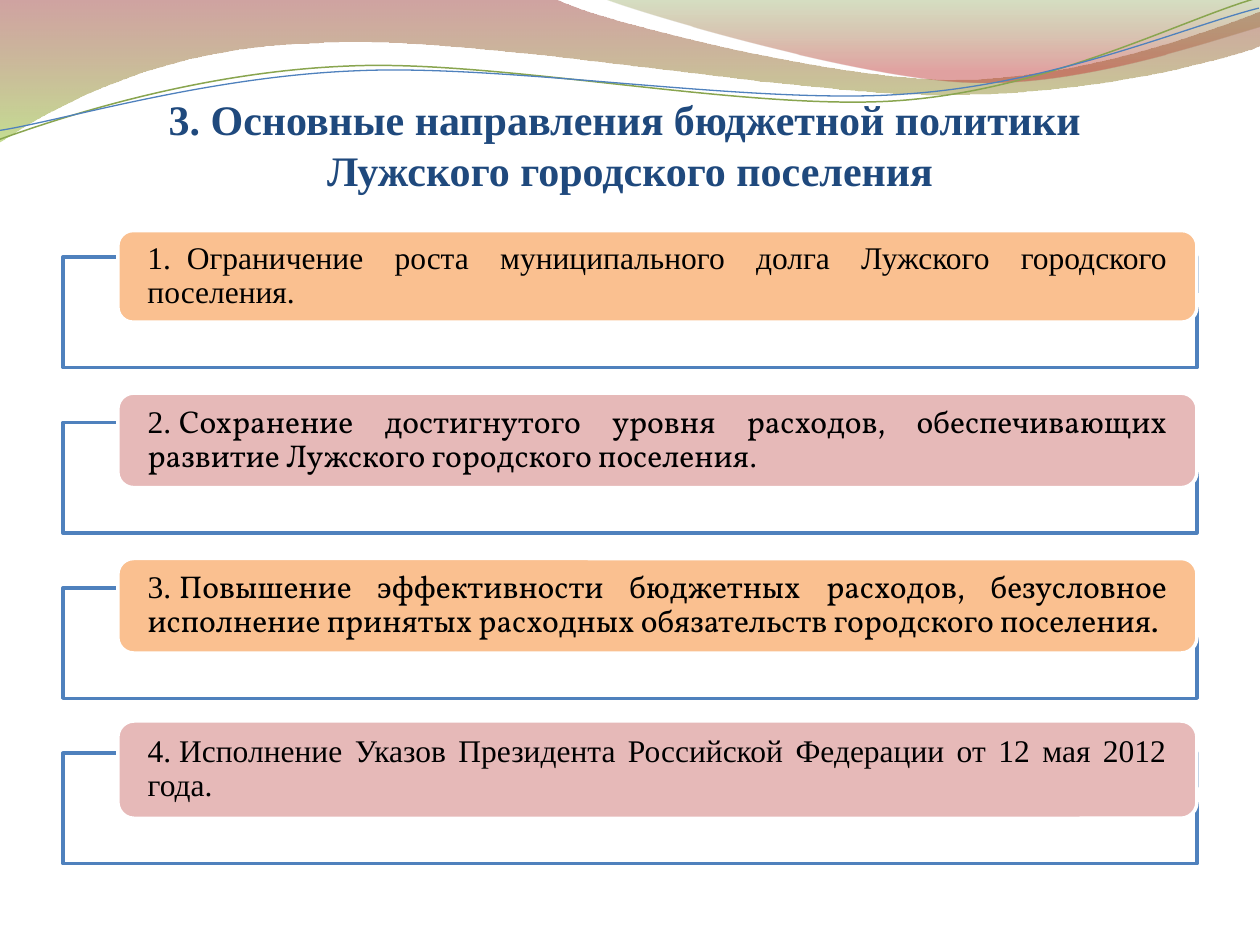
import pptx
import pptx.util
import pptx.dml.color
import pptx.enum.shapes
import pptx.enum.text
import pptx.oxml
import pptx.oxml.ns
import lxml.etree

COLORS = {
    "title": "1F497D", "text": "000000", "white": "FFFFFF", "frame": "4F81BD",
    "orange": "FAC090", "pink": "E6B9B8", "green_line": "89A54F",
    "brick": "973330", "lime": "95C238", "moss": "769537", "red": "BE3330",
}
SERIF, BODY = "Times New Roman", "Vollkorn"
HARD_SPACE = chr(160)
SHAPE = pptx.enum.shapes.MSO_SHAPE
ALIGN = pptx.enum.text.PP_ALIGN
ANCHOR = pptx.enum.text.MSO_ANCHOR
RGB = {name: pptx.dml.color.RGBColor.from_string(code) for name, code in COLORS.items()}

deck = pptx.Presentation()
deck.slide_width, deck.slide_height = pptx.util.Inches(10), pptx.util.Inches(7.5)
W, H = deck.slide_width, deck.slide_height
column, row = W / 20, 0.175 * H
slide = deck.slides.add_slide(deck.slide_layouts[6])


def set_opacity(shape, percents):
    """Make the shape's fill colours, in order, partly transparent."""
    fill_colors = shape._element.spPr.iter(pptx.oxml.ns.qn("a:srgbClr"))
    for color, percent in zip(fill_colors, percents):
        alpha = lxml.etree.SubElement(color, pptx.oxml.ns.qn("a:alpha"))
        alpha.set("val", str(percent * 1000))


def add_curve(start, segments, closed):
    """Draw lines (2 numbers) and Bezier curves (6 numbers), in tenths of the slide width."""
    unit = W / 10
    points = [(segment[i] * unit, segment[i + 1] * unit)
              for segment in segments for i in range(0, len(segment), 2)]
    outline = slide.shapes.build_freeform(start[0] * unit, start[1] * unit)
    outline.add_line_segments(points, close=closed)
    curve = outline.convert_to_shape()
    curve.shadow.inherit = False
    steps = iter(list(curve._element.iter(pptx.oxml.ns.qn("a:lnTo"))))
    for segment in segments:
        step = next(steps)
        if len(segment) == 6:
            step.tag = pptx.oxml.ns.qn("a:cubicBezTo")
            for _ in range(2):
                merged = next(steps)
                step.append(merged[0])
                merged.getparent().remove(merged)
    return curve


# Waves: start, segments, gradient stops (colour, position, opacity)
waves = [
    ((0, 0),
     [(4.4, -0.01), (4.76, 0.17, 6.64, 0.63, 7.58, 0.63), (8.53, 0.63, 9.58, 0.26, 10, 0.09),
      (10.01, 0.36), (9.83, 0.44, 8.7, 0.76, 7.46, 0.75), (6.22, 0.75, 3.82, 0.28, 2.57, 0.34),
      (1.29, 0.36, 0.46, 0.83, -0.01, 1.13)],
     [("brick", 0, 45), ("lime", 1, 55)]),
    ((4.79, -0.01),
     [(5.09, 0.11, 6.82, 0.62, 7.69, 0.65), (8.56, 0.69, 9.61, 0.32, 10, 0.21), (10, 0)],
     [("moss", 0, 30), ("red", 0.8, 45)]),
]
for start, segments, stops in waves:
    wave = add_curve(start, segments, True)
    wave.line.fill.background()
    wave.fill.gradient()
    wave.fill.gradient_angle = 270
    for gradient_stop, (color, position, _) in zip(wave.fill.gradient_stops, stops):
        gradient_stop.color.rgb = RGB[color]
        gradient_stop.position = position
    set_opacity(wave, [opacity for _, _, opacity in stops])

# Thin lines along the waves, tilted up to the right
ripples = [
    ((-0.02, 0.87), "green_line", 0.85,
     [(0.47, 0.72, 1.58, 0.41, 2.77, 0.42), (3.96, 0.42, 5.91, 0.93, 7.12, 0.9),
      (8.32, 0.87, 9.4, 0.36, 10, 0.22)]),
    ((-0.02, 0.8), "frame", 0.75,
     [(0.46, 0.75, 1.64, 0.45, 2.83, 0.46), (4.03, 0.46, 5.96, 0.88, 7.16, 0.85),
      (8.35, 0.83, 9.42, 0.42, 10.01, 0.3)]),
]
for start, color, width, segments in ripples:
    ripple = add_curve(start, segments, False)
    ripple.rotation = 357.3
    ripple.fill.background()
    ripple.line.color.rgb = RGB[color]
    ripple.line.width = pptx.util.Pt(width)

# Title
heading = slide.shapes.add_textbox(*map(int, (column, 0.06 * H, 18 * column, 0.146 * H))).text_frame
heading_format = {"word_wrap": True, "vertical_anchor": ANCHOR.BOTTOM, "margin_left": 0,
                  "margin_right": 0, "margin_top": pptx.util.Inches(0.05), "margin_bottom": 0}
for key, value in heading_format.items():
    setattr(heading, key, value)
title = heading.paragraphs[0]
title.text = "3. Основные направления бюджетной политики \nЛужского городского поселения"
title.alignment = ALIGN.CENTER
title_font = {"name": SERIF, "size": pptx.util.Pt(24), "bold": True}
for run in title.runs:
    for key, value in title_font.items():
        setattr(run.font, key, value)
    run.font.color.rgb = RGB["title"]

# Directions: card colour, card height as a share of the slide, text runs
directions = [
    ("orange", 0.097,
     [(f"1.{HARD_SPACE * 2}Ограничение роста муниципального долга "
       "Лужского городского поселения.", SERIF)]),
    ("pink", 0.1,
     [(f"2.{HARD_SPACE}", SERIF),
      ("Сохранение достигнутого уровня расходов, обеспечивающих развитие "
       "Лужского городского поселения", BODY),
      (".", SERIF)]),
    ("orange", 0.1,
     [(f"3.{HARD_SPACE}", SERIF),
      ("Повышение эффективности бюджетных расходов, безусловное исполнение "
       "принятых расходных обязательств городского поселения.", BODY)]),
    ("pink", 0.103,
     [(f"4.{HARD_SPACE}Исполнение Указов Президента Российской Федерации "
       "от 12 мая 2012 года.", SERIF)]),
]
card_format = {"word_wrap": True, "vertical_anchor": ANCHOR.MIDDLE,
               "margin_left": pptx.util.Inches(0.2), "margin_right": pptx.util.Inches(0.2),
               "margin_top": 0, "margin_bottom": 0}
for index, (color, card_height, wording) in enumerate(directions):
    frame_top = 0.272 * H + index * row
    card_top = frame_top + 0.069 * H - card_height * H
    frame = slide.shapes.add_shape(
        SHAPE.RECTANGLE, *map(int, (column, frame_top, 18 * column, 0.117 * H)))
    card = slide.shapes.add_shape(
        SHAPE.ROUNDED_RECTANGLE,
        *map(int, (1.87 * column, card_top, 17.13 * column, card_height * H)))
    for box, fill, line in ((frame, "white", "frame"), (card, color, "white")):
        box.shadow.inherit = False
        box.fill.solid()
        box.fill.fore_color.rgb = RGB[fill]
        box.line.color.rgb = RGB[line]
        box.line.width = pptx.util.Pt(2)
    set_opacity(frame, [90])

    for key, value in card_format.items():
        setattr(card.text_frame, key, value)
    direction = card.text_frame.paragraphs[0]
    direction.alignment = ALIGN.JUSTIFY
    direction.line_spacing = 0.9
    for words, font_name in wording:
        run = direction.add_run()
        run.text = words
        run.font.name = font_name
        run.font.size = pptx.util.Pt(18)
        run.font.color.rgb = RGB["text"]

deck.save("out.pptx")
